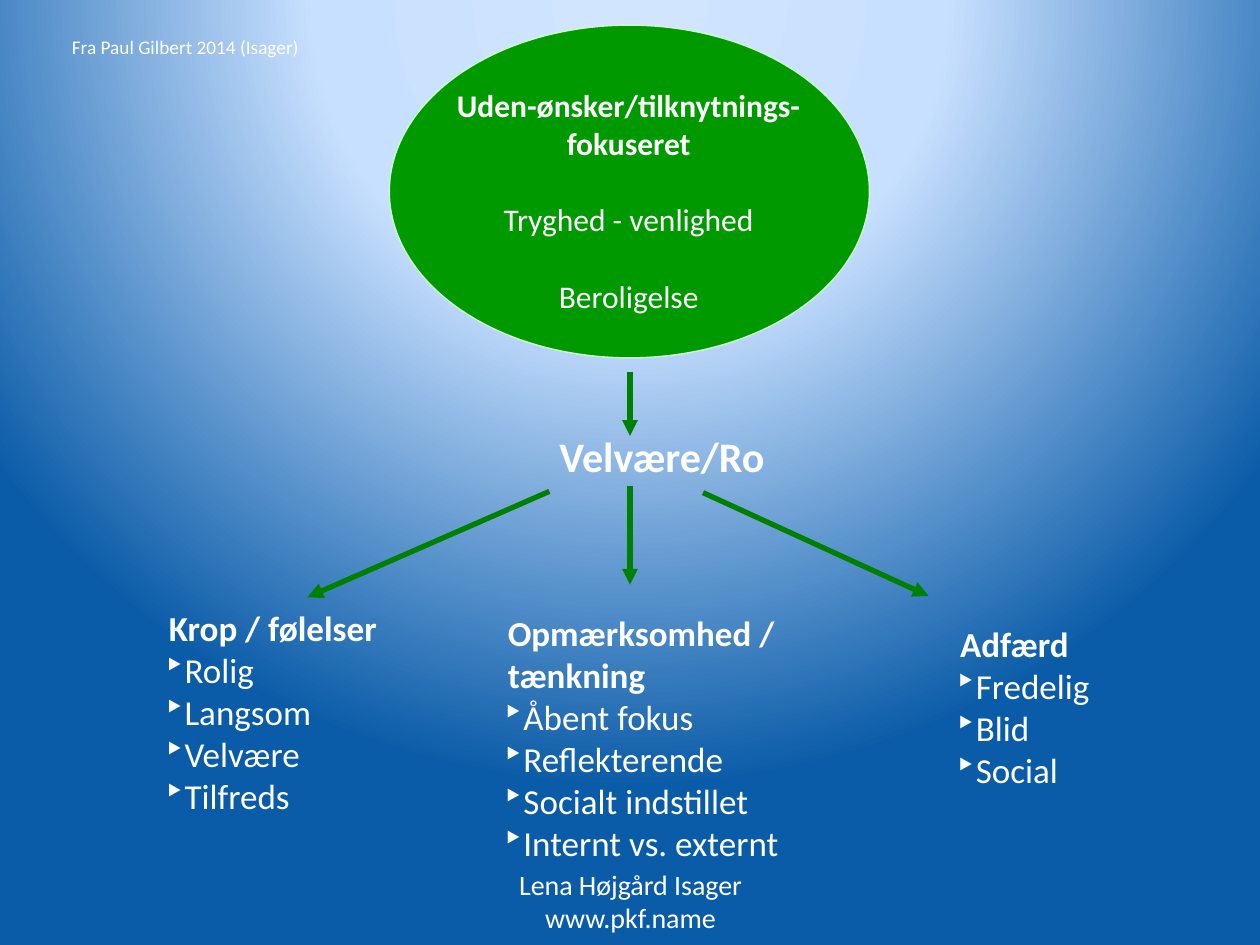
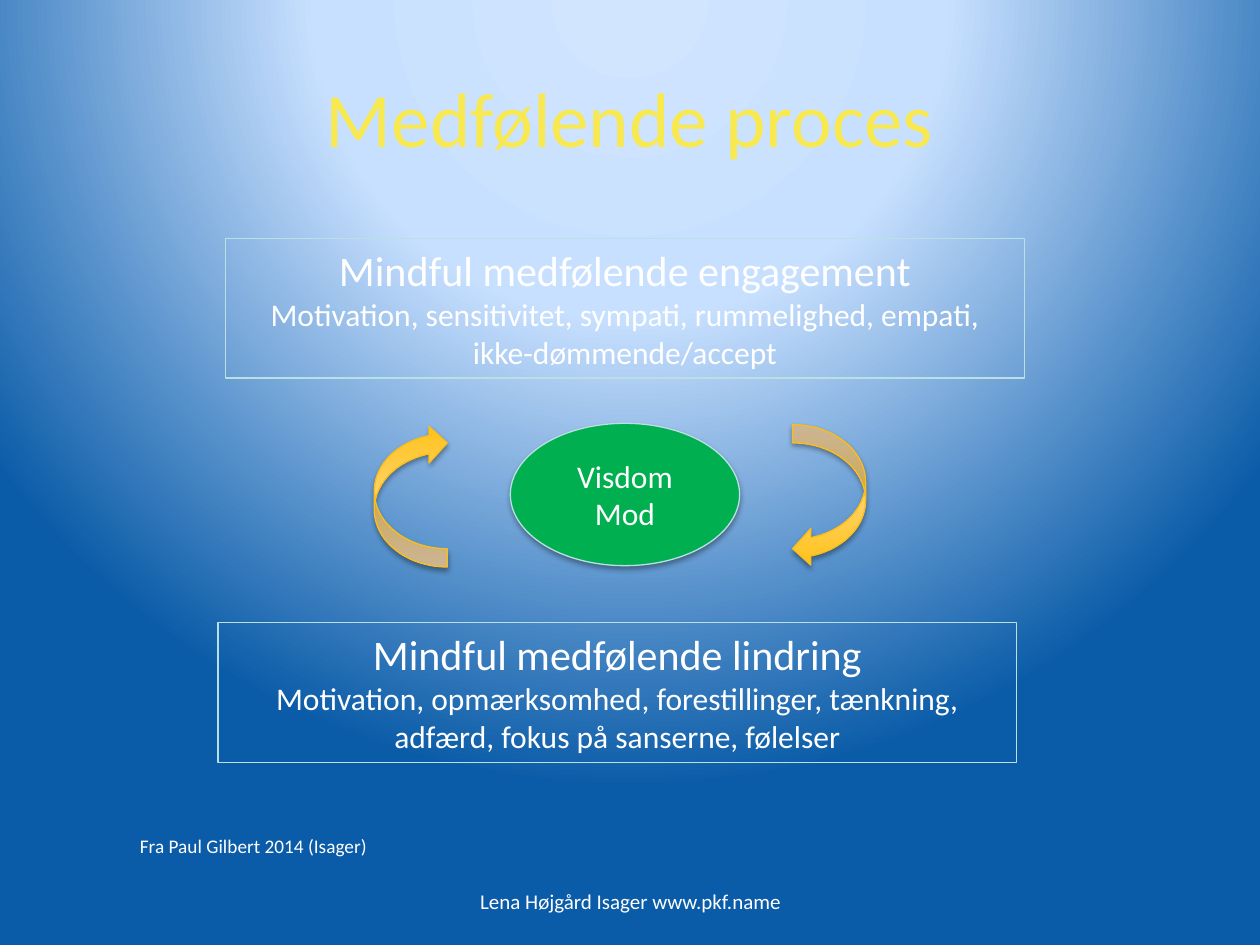
from dataclasses import dataclass

from lxml import etree
from pptx import Presentation
from pptx.dml.color import RGBColor
from pptx.enum.shapes import MSO_CONNECTOR as Link, MSO_SHAPE as Kind
from pptx.enum.text import MSO_ANCHOR as Anchor, PP_ALIGN as Align
from pptx.oxml import parse_xml
from pptx.oxml.ns import nsdecls, qn
from pptx.util import Inches, Pt

FONT = "Calibri"
WHITE = RGBColor(0xFF, 0xFF, 0xFF)
YELLOW = RGBColor(0xF8, 0xE9, 0x50)
GREEN = RGBColor(0x00, 0x99, 0x00)
DARK = RGBColor(0x00, 0x80, 0x00)
MINT = RGBColor(0xCC, 0xFF, 0xCC)
EMERALD = RGBColor(0x00, 0xB0, 0x50)
AQUA = RGBColor(0xBB, 0xE0, 0xE3)
AMBER = RGBColor(0xFF, 0xC2, 0x1A)
CREAM = RGBColor(0xFF, 0xE3, 0xBB)
GOLD = RGBColor(0xFB, 0xBE, 0x18)
GLOW = (
    (0, RGBColor(0xD1, 0xE5, 0xFF)),
    (40, RGBColor(0xC8, 0xE0, 0xFF)),
    (100, RGBColor(0x0B, 0x5C, 0xA8)),
)
TIGHT = (0, 0, 0.04, 0)
SNUG = (0.02, 0.02, 0.06, 0.02)
NORMAL = (0.1, 0.05, 0.1, 0.05)
HANG = 0.13


@dataclass
class Area:
    left: float
    top: float
    width: float
    height: float

    def lengths(self) -> list:
        return [Inches(n) for n in (self.left, self.top, self.width, self.height)]


@dataclass
class Line:
    text: str
    size: float
    bold: bool = False
    color: RGBColor = WHITE
    bullet: bool = False
    gap: float = 0


@dataclass
class Column:
    area: Area
    head: str
    items: tuple


@dataclass
class Arrow:
    start: tuple
    end: tuple


@dataclass
class Panel:
    area: Area
    head: str
    detail: str


COLUMNS = (
    Column(Area(3.99, 4.85, 3.2, 2), "Opmærksomhed / tænkning",
           ("Åbent fokus", "Reflekterende", "Socialt indstillet", "Internt vs. externt")),
    Column(Area(1.3, 4.81, 1.79, 1.3), "Krop / følelser",
           ("Rolig", "Langsom", "Velvære", "Tilfreds")),
    Column(Area(7.58, 4.94, 1.4, 1.68), "Adfærd",
           ("Fredelig", "Blid", "Social")),
)
ARROWS = (
    Arrow((5.58, 3.91), (7.37, 4.73)),
    Arrow((5, 3.86), (5, 4.64)),
    Arrow((4.36, 3.9), (2.44, 4.74)),
    Arrow((5, 2.95), (5, 3.46)),
)
PANELS = (
    Panel(Area(1.79, 1.89, 6.34, 1.11), "Mindful medfølende engagement",
          "Motivation, sensitivitet, sympati, rummelighed, empati, ikke-dømmende/accept"),
    Panel(Area(1.73, 4.94, 6.34, 1.11), "Mindful medfølende lindring",
          "Motivation, opmærksomhed, forestillinger, tænkning, adfærd, "
          "fokus på sanserne, følelser"),
)


def paint_back(master) -> None:
    """Give every slide the round glow that starts above its top edge."""
    master.background.fill.solid()
    holder = master.element.find(".//" + qn("p:bgPr"))
    stops = "".join(
        f'<a:gs pos="{spot * 1000}"><a:srgbClr val="{color}"/></a:gs>'
        for spot, color in GLOW
    )
    glow = parse_xml(
        f'<a:gradFill {nsdecls("a")} rotWithShape="1"><a:gsLst>{stops}</a:gsLst>'
        '<a:path path="circle"><a:fillToRect l="50000" t="-80000" r="50000" b="180000"/>'
        "</a:path></a:gradFill>"
    )
    holder.replace(holder.find(qn("a:solidFill")), glow)


def write(shape, lines: list, align=Align.LEFT, anchor=Anchor.TOP,
          insets: tuple = NORMAL, indent: float = 0, wrap: bool = True) -> None:
    frame = shape.text_frame
    frame.word_wrap = wrap
    frame.vertical_anchor = anchor
    (frame.margin_left, frame.margin_top,
     frame.margin_right, frame.margin_bottom) = [Inches(n) for n in insets]
    frame.text = "\n".join(line.text for line in lines)
    for para, line in zip(frame.paragraphs, lines):
        para.alignment = align
        if line.gap:
            para.space_before = Pt(line.gap)
        props = para._p.get_or_add_pPr()
        props.set("marL", str(Inches(HANG if line.bullet else indent)))
        props.set("indent", str(Inches(-HANG if line.bullet else 0)))
        if line.bullet:
            etree.SubElement(props, qn("a:buSzPct"), val="100000")
            etree.SubElement(props, qn("a:buChar"), char="‣")
        for run in para.runs:
            font = run.font
            font.name, font.size, font.bold = FONT, Pt(line.size), line.bold
            font.color.rgb = line.color


def add_text(slide, area: Area, lines: list, **style) -> None:
    write(slide.shapes.add_textbox(*area.lengths()), lines, **style)


def add_label(slide, area: Area, lines: list, wrap: bool = False) -> None:
    """Left-aligned text with almost no inner margin."""
    add_text(slide, area, lines, insets=TIGHT, indent=0.04, wrap=wrap)


def add_form(slide, kind, area: Area, edge: RGBColor, fill: RGBColor | None = None):
    form = slide.shapes.add_shape(kind, *area.lengths())
    form.shadow.inherit = False
    form.line.color.rgb = edge
    form.line.width = Pt(0.75)
    if fill is None:
        form.fill.background()
    else:
        form.fill.solid()
        form.fill.fore_color.rgb = fill
    return form


def add_shade(form) -> None:
    """Soft black shadow straight below the shape."""
    effects = form._element.spPr.find(qn("a:effectLst"))
    effects.append(parse_xml(
        f'<a:outerShdw {nsdecls("a")} blurRad="{Pt(3.1)}" dist="{Pt(1.8)}" '
        'dir="5400000" rotWithShape="0"><a:srgbClr val="000000">'
        '<a:alpha val="35000"/></a:srgbClr></a:outerShdw>'
    ))


def add_arrow(slide, arrow: Arrow) -> None:
    ends = [Inches(n) for n in arrow.start + arrow.end]
    link = slide.shapes.add_connector(Link.STRAIGHT, *ends)
    link.line.color.rgb = DARK
    link.line.width = Pt(3)
    etree.SubElement(link.line._get_or_add_ln(), qn("a:tailEnd"), type="triangle")
    etree.SubElement(link._element.spPr, qn("a:effectLst"))


def add_curve(slide, left: float, turn: float) -> None:
    curve = add_form(slide, Kind.CURVED_LEFT_ARROW, Area(left, 3.37, 0.58, 1.13), GOLD)
    curve.rotation = turn
    curve.fill.gradient()
    curve.fill.gradient_angle = 90
    for stop, color in zip(curve.fill.gradient_stops, (AMBER, CREAM)):
        stop.color.rgb = color
    add_shade(curve)


def add_footer(slide, size: float) -> None:
    add_text(slide, Area(3.42, 6.95, 3.17, 0.4),
             [Line("Lena Højgård Isager www.pkf.name", size)],
             align=Align.CENTER, anchor=Anchor.MIDDLE)


def add_credit(slide, left: float, top: float) -> None:
    add_label(slide, Area(left, top, 1.91, 0.19),
              [Line("Fra Paul Gilbert 2014 (Isager)", 11)])


def build_calm(slide) -> None:
    add_form(slide, Kind.OVAL, Area(3.09, 0.2, 3.81, 2.64), MINT, GREEN)
    for arrow in ARROWS:
        add_arrow(slide, arrow)
    add_label(slide, Area(4.4, 3.42, 1.73, 0.4), [Line("Velvære/Ro", 24, bold=True)])
    for col in COLUMNS:
        items = [Line(item, 20, bullet=True) for item in col.items]
        add_label(slide, col.area, [Line(col.head, 20, bold=True)] + items, wrap=True)
    aims = [
        Line("Uden-ønsker/tilknytnings-", 18, bold=True),
        Line("fokuseret", 18, bold=True),
        Line("Tryghed - venlighed", 18, gap=22),
        Line("Beroligelse", 18, gap=22),
    ]
    add_text(slide, Area(3.58, 0.66, 2.84, 1.86), aims, align=Align.CENTER,
             anchor=Anchor.MIDDLE, insets=SNUG, indent=0.02, wrap=False)
    add_footer(slide, 16)
    add_credit(slide, 0.53, 0.28)


def build_process(slide) -> None:
    add_text(slide, Area(0.5, 0.3, 9, 1.25), [Line("Medfølende proces", 44, color=YELLOW)],
             align=Align.CENTER, anchor=Anchor.MIDDLE)
    add_footer(slide, 12)
    for panel in PANELS:
        form = add_form(slide, Kind.RECTANGLE, panel.area, AQUA)
        write(form, [Line(panel.head, 24), Line(panel.detail, 18)], align=Align.CENTER)
    core = add_form(slide, Kind.OVAL, Area(4.05, 3.36, 1.82, 1.13), AQUA, EMERALD)
    add_shade(core)
    write(core, [Line("Visdom", 18), Line("Mod", 18)],
          align=Align.CENTER, anchor=Anchor.MIDDLE)
    add_curve(slide, 6.29, 0)
    add_curve(slide, 2.97, 180)
    add_credit(slide, 1.07, 6.62)


def main() -> None:
    deck = Presentation()
    deck.slide_width, deck.slide_height = Inches(10), Inches(7.5)
    paint_back(deck.slide_master)
    blank = deck.slide_layouts[6]
    for build in (build_calm, build_process):
        build(deck.slides.add_slide(blank))
    deck.save("out.pptx")


if __name__ == "__main__":
    main()
